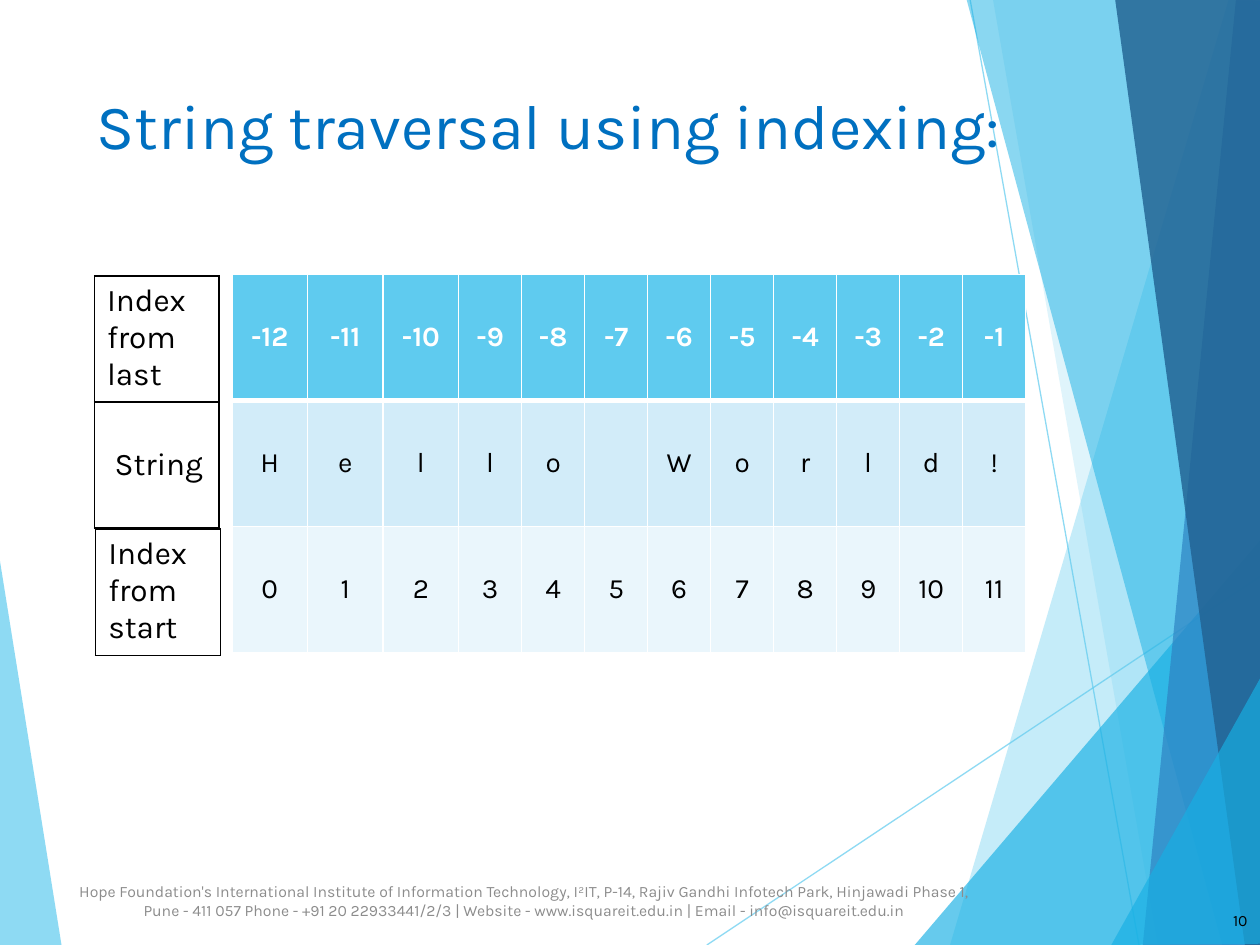
"""Build the slide on string traversal using indexing."""
import pptx
import pptx.dml.color
import pptx.enum.shapes
import pptx.enum.text
import pptx.oxml.ns
import pptx.util
from lxml import etree

Inches, Pt = pptx.util.Inches, pptx.util.Pt
RGB = pptx.dml.color.RGBColor
ALIGN, ANCHOR = pptx.enum.text.PP_ALIGN, pptx.enum.text.MSO_ANCHOR
qn = pptx.oxml.ns.qn

SKY = RGB(0x5F, 0xCB, 0xEF)
CYAN = RGB(0x17, 0xB0, 0xE4)
BLUE = RGB(0x2E, 0x83, 0xC3)
NAVY = RGB(0x22, 0x62, 0x92)
TITLE = RGB(0x00, 0x70, 0xC0)
GREY = RGB(0x8C, 0x8C, 0x8C)
BLACK = RGB(0, 0, 0)
WHITE = RGB(0xFF, 0xFF, 0xFF)
BAND_1 = RGB(0xD2, 0xEC, 0xF9)
BAND_2 = RGB(0xEA, 0xF6, 0xFC)

LEFT_FACET = (SKY, 70, [(-0.01, 4.39), (0.49, 7.51), (-0.01, 7.5)])
RAYS = [((5.61, 7.5), (10.01, 4.57)), ((7.7, 0), (9.04, 7.5))]
RIGHT_FACETS = [
    (SKY, 36, [(9.75, 0), (7.54, 7.5), (10.02, 7.51), (10.01, 0.01)]),
    (SKY, 20, [(7.88, -0.01), (9.19, 7.5), (10.01, 7.5), (10.01, -0.01)]),
    (CYAN, 66, [(7.26, 7.5), (10, 4.29), (10.01, 7.5)]),
    (CYAN, 50, [(7.67, -0.01), (9.7, 7.5), (10.01, 7.49), (10.01, -0.01)]),
    (BLUE, 70, [(9.81, -0.01), (9.07, 7.5), (10.01, 7.5), (10, -0.01)]),
    (NAVY, 82, [(8.85, -0.01), (9.88, 7.5), (10.02, 7.5), (10, -0.01)]),
    (CYAN, 66, [(8.82, 7.5), (10.02, 5.35), (10.02, 7.49)]),
]

FOOTER = (
    "Hope Foundation's International Institute of Information Technology, "
    "I²IT, P-14, Rajiv Gandhi Infotech Park, Hinjawadi Phase 1, "
    "Pune - 411 057 Phone - +91 20 22933441/2/3 | "
    "Website - www.isquareit.edu.in | Email - info@isquareit.edu.in"
)
TEXTS = [
    ("String traversal using indexing:", (0.67, 0.4, 8.46, 1.18), 36, TITLE, ALIGN.LEFT),
    (FOOTER, (0.43, 6.95, 7.45, 0.4), 9, GREY, ALIGN.CENTER),
    ("10", (9.44, 7.1, 0.56, 0.4), 9, BLACK, ALIGN.RIGHT),
]

WORD = "Hello World!"
COUNT = len(WORD)
ROWS = [
    ([str(i - COUNT) for i in range(COUNT)], SKY, WHITE, True),
    ([c.strip() for c in WORD], BAND_1, BLACK, False),
    ([str(i) for i in range(COUNT)], BAND_2, BLACK, False),
]
COL_WIDTHS = [0.6] * 3 + [0.5] * (COUNT - 3)
LABELS = [
    ("Index from last", 0.75, 2.19, 0.1, ANCHOR.TOP),
    ("String", 0.75, 3.19, 0.16, ANCHOR.MIDDLE),
    ("Index from start", 0.76, 4.2, 0.1, ANCHOR.TOP),
]


def apply(obj, **values):
    for name, value in values.items():
        setattr(obj, name, value)


def set_alpha(shape, percent):
    for clr in shape._element.spPr.iter(qn("a:srgbClr")):
        etree.SubElement(clr, qn("a:alpha"), val=str(percent * 1000))


def add_facet(s, color, alpha, points):
    pts = [(Inches(x), Inches(y)) for x, y in points]
    fb = s.shapes.build_freeform(*pts[0], scale=1.0)
    fb.add_line_segments(pts[1:], close=True)
    sp = fb.convert_to_shape()
    sp.shadow.inherit = False
    sp.fill.solid()
    sp.fill.fore_color.rgb = color
    sp.line.fill.background()
    set_alpha(sp, alpha)


def add_ray(s, start, end):
    kind = pptx.enum.shapes.MSO_CONNECTOR.STRAIGHT
    ray = s.shapes.add_connector(kind, *map(Inches, start + end))
    ray.line.color.rgb = SKY
    ray.line.width = Pt(0.75)
    set_alpha(ray, 70)
    etree.SubElement(ray._element.spPr, qn("a:effectLst"))


def write(tf, text, size, color, align, bold=False):
    tf.word_wrap = True
    p = tf.paragraphs[0]
    p.alignment = align
    if text:
        r = p.add_run()
        r.text = text
        apply(r.font, name="Karla", size=Pt(size), bold=bold)
        r.font.color.rgb = color


def add_text(s, text, box, size, color, align):
    tf = s.shapes.add_textbox(*map(Inches, box)).text_frame
    tf.vertical_anchor = ANCHOR.MIDDLE
    write(tf, text, size, color, align)


def set_borders(cell, color, **widths):
    tc_pr = cell._tc.get_or_add_tcPr()
    for side in "LRTB":
        width = str(Pt(widths.get(side, 1)))
        ln = etree.SubElement(tc_pr, qn("a:ln" + side), w=width)
        fill = etree.SubElement(ln, qn("a:solidFill"))
        etree.SubElement(fill, qn("a:srgbClr"), val=str(color))


def add_grid(s, n_rows, widths, left, top):
    box = map(Inches, (left, top, sum(widths), n_rows))
    table = s.shapes.add_table(n_rows, len(widths), *box).table
    apply(table, first_row=False, horz_banding=False)
    for col, width in zip(table.columns, widths):
        col.width = Inches(width)
    return table


def add_index_table(s):
    table = add_grid(s, len(ROWS), COL_WIDTHS, 1.84, 2.18)
    heavy = [{"B": 3}, {"T": 3}, {}]
    for i, (values, fill, color, bold) in enumerate(ROWS):
        for j, value in enumerate(values):
            cell = table.cell(i, j)
            set_borders(cell, WHITE, **heavy[i])
            cell.fill.solid()
            cell.fill.fore_color.rgb = fill
            cell.vertical_anchor = ANCHOR.MIDDLE
            write(cell.text_frame, value, 16, color, ALIGN.CENTER, bold)


def add_label(s, text, left, top, margin, anchor):
    cell = add_grid(s, 1, [0.99], left, top).cell(0, 0)
    set_borders(cell, BLACK)
    cell.fill.background()
    apply(cell, margin_left=Inches(margin), vertical_anchor=anchor)
    write(cell.text_frame, text, 18, BLACK, ALIGN.LEFT)


def main():
    prs = pptx.Presentation()
    apply(prs, slide_width=Inches(10), slide_height=Inches(7.5))
    s = prs.slides.add_slide(prs.slide_layouts[6])
    add_facet(s, *LEFT_FACET)
    for ray in RAYS:
        add_ray(s, *ray)
    for facet in RIGHT_FACETS:
        add_facet(s, *facet)
    for text in TEXTS:
        add_text(s, *text)
    add_index_table(s)
    for label in LABELS:
        add_label(s, *label)
    prs.save("out.pptx")


if __name__ == "__main__":
    main()
